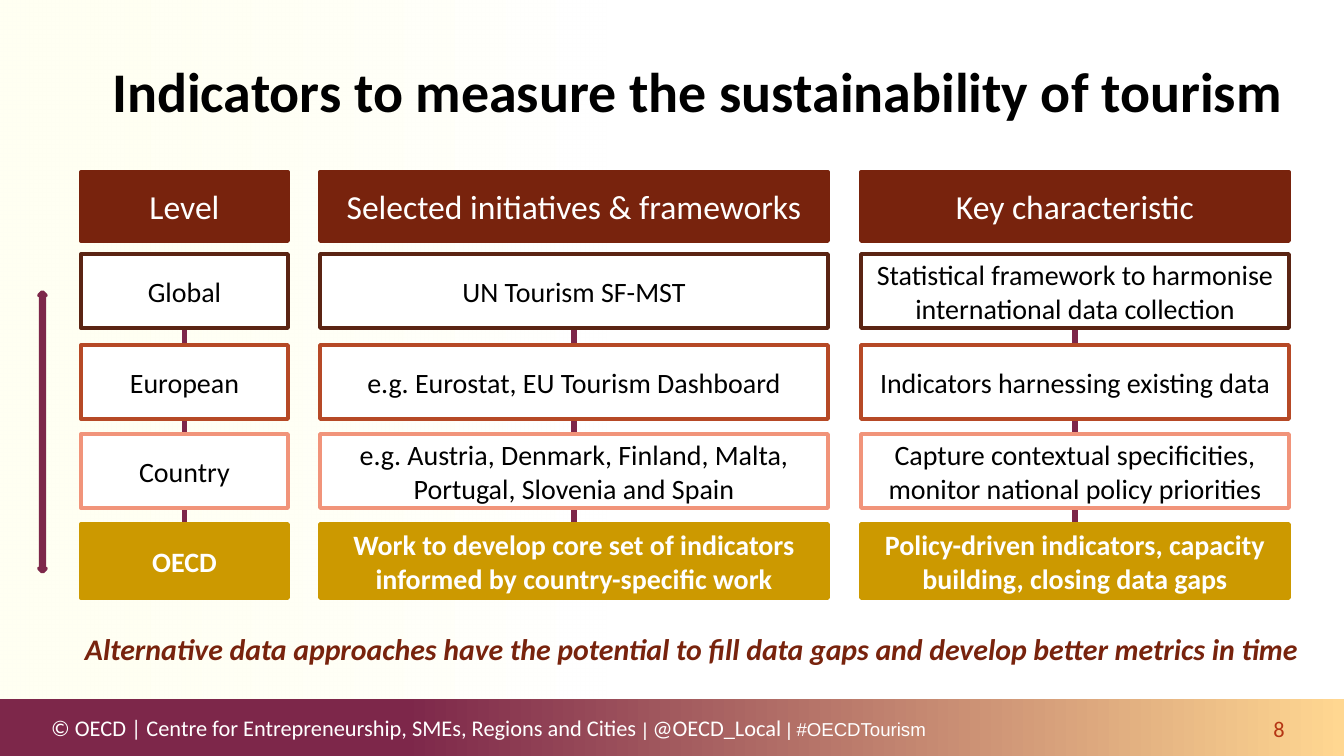
from lxml.etree import SubElement
from pptx import Presentation
from pptx.dml.color import RGBColor
from pptx.enum.shapes import MSO_CONNECTOR as Connector, MSO_SHAPE as Preset
from pptx.enum.text import MSO_ANCHOR as Anchor, PP_ALIGN as Align
from pptx.oxml.ns import qn
from pptx.util import Emu, Inches, Pt

SLIDE_WIDTH, SLIDE_HEIGHT = 1344, 756
SCALE = 914400 / 134.4

COLORS = {
    "black": "000000", "white": "FFFFFF", "plum": "7D274A", "sand": "FFD791",
    "cream": "FFFFE7", "maroon": "78230D", "brown": "5B2413", "rust": "B64926",
    "salmon": "F1947A", "gold": "CC9900", "page": "B53513",
}

TITLE = "Indicators to measure the sustainability of tourism"
MESSAGE = ("Alternative data approaches have the potential to fill data gaps "
           "and develop better metrics in time")
PAGE_NUMBER = "8"
FOOTER = [
    ("© OECD | Centre for Entrepreneurship, SMEs, Regions and Cities", 12, "Calibri"),
    (" | ", 10, "Arial"),
    ("@OECD_Local", 12, "Calibri"),
    (" | #OECDTourism", 10, "Arial"),
]

COLUMNS = [(81, 207, 320), (320, 508, 328), (861, 428, 323)]
LINK_HEIGHT = 254

ROWS = [
    {"top": 172, "height": 69, "fill": "maroon", "line": "maroon", "color": "white",
     "size": 18, "bold": False,
     "cells": ["Level", "Selected initiatives & frameworks", "Key characteristic"]},
    {"top": 254, "height": 74, "fill": "white", "line": "brown", "color": "black",
     "size": 15, "bold": False,
     "cells": ["Global", "UN Tourism SF-MST",
               "Statistical framework to harmonise international data collection"]},
    {"top": 345, "height": 74, "fill": "white", "line": "rust", "color": "black",
     "size": 15, "bold": False,
     "cells": ["European", "e.g. Eurostat, EU Tourism Dashboard",
               "Indicators harnessing existing data"]},
    {"top": 434, "height": 74, "fill": "white", "line": "salmon", "color": "black",
     "size": 15, "bold": False,
     "cells": ["Country",
               "e.g. Austria, Denmark, Finland, Malta, Portugal, Slovenia and Spain",
               "Capture contextual specificities, monitor national policy priorities"]},
    {"top": 524, "height": 74, "fill": "gold", "line": "gold", "color": "white",
     "size": 15, "bold": True,
     "cells": ["OECD",
               "Work to develop core set of indicators informed by country-specific work",
               "Policy-driven indicators, capacity building, closing data gaps"]},
]


def px(value):
    return Emu(round(value * SCALE))


def rgb(name):
    return RGBColor.from_string(COLORS[name])


def add_run(paragraph, text, size, color, font="Calibri", bold=False, italic=False):
    run = paragraph.add_run()
    run.text = text
    run.font.name = font
    run.font.size = Pt(size)
    run.font.bold = bold
    run.font.italic = italic
    run.font.color.rgb = rgb(color)


def first_paragraph(shape, align, wrap=True):
    frame = shape.text_frame
    frame.word_wrap = wrap
    frame.vertical_anchor = Anchor.MIDDLE
    paragraph = frame.paragraphs[0]
    paragraph.alignment = align
    return paragraph


def add_box(slide, preset, box, fill, line):
    shape = slide.shapes.add_shape(preset, *map(px, box))
    shape.shadow.inherit = False
    shape.fill.solid()
    shape.fill.fore_color.rgb = rgb(fill)
    shape.line.color.rgb = rgb(line)
    shape.line.width = Pt(2)
    return shape


def add_gradient(slide, box, stops):
    shape = slide.shapes.add_shape(Preset.RECTANGLE, *map(px, box))
    shape.shadow.inherit = False
    shape.line.fill.background()
    shape.fill.gradient()
    shape.fill.gradient_angle = 180
    for stop, (position, color) in zip(shape.fill.gradient_stops, stops):
        stop.position = position
        stop.color.rgb = rgb(color)
    return shape


def add_text_box(slide, box, align, wrap=True):
    shape = slide.shapes.add_textbox(*map(px, box))
    return shape, first_paragraph(shape, align, wrap)


def add_link(slide, x, top):
    link = slide.shapes.add_connector(
        Connector.STRAIGHT, px(x), px(top), px(x), px(top + LINK_HEIGHT))
    link.line.color.rgb = rgb("plum")
    link.line.width = Pt(3)
    SubElement(link._element.spPr, qn("a:effectLst"))


def main():
    presentation = Presentation()
    presentation.slide_width = px(SLIDE_WIDTH)
    presentation.slide_height = px(SLIDE_HEIGHT)
    slide = presentation.slides.add_slide(presentation.slide_layouts[6])

    add_gradient(slide, (0, 699, SLIDE_WIDTH, 57), [(0, "sand"), (0.7, "plum")])
    glow = add_gradient(slide, (0, 0, 607, 699), [(0, "white"), (1, "cream")])
    cream = list(glow._element.spPr.iter(qn("a:srgbClr")))[-1]
    SubElement(cream, qn("a:alpha")).set("val", "50000")

    footer, paragraph = add_text_box(slide, (38, 714, 1000, 27), Align.LEFT)
    footer.text_frame.margin_right = 0
    for text, size, font in FOOTER:
        add_run(paragraph, text, size, "white", font)

    for left, width, link_top in COLUMNS:
        add_link(slide, left + width / 2, link_top)

    _, paragraph = add_text_box(slide, (99, 20, 1237, 143), Align.LEFT)
    paragraph.line_spacing = Pt(34)
    add_run(paragraph, TITLE, 30, "black", bold=True)

    _, paragraph = add_text_box(slide, (1254, 715, 50, 27), Align.CENTER, wrap=False)
    add_run(paragraph, PAGE_NUMBER, 12, "page")

    for row in ROWS:
        for (left, width, _), text in zip(COLUMNS, row["cells"]):
            cell = add_box(slide, Preset.RECTANGLE,
                           (left, row["top"], width, row["height"]),
                           row["fill"], row["line"])
            add_run(first_paragraph(cell, Align.CENTER), text,
                    row["size"], row["color"], bold=row["bold"])

    add_box(slide, Preset.UP_DOWN_ARROW, (39, 292, 7, 280), "plum", "plum")

    message, paragraph = add_text_box(slide, (81, 612, 1222, 74), Align.CENTER)
    message.text_frame.margin_left = message.text_frame.margin_right = Inches(0)
    add_run(paragraph, MESSAGE, 16, "maroon", bold=True, italic=True)

    presentation.save("out.pptx")


if __name__ == "__main__":
    main()
